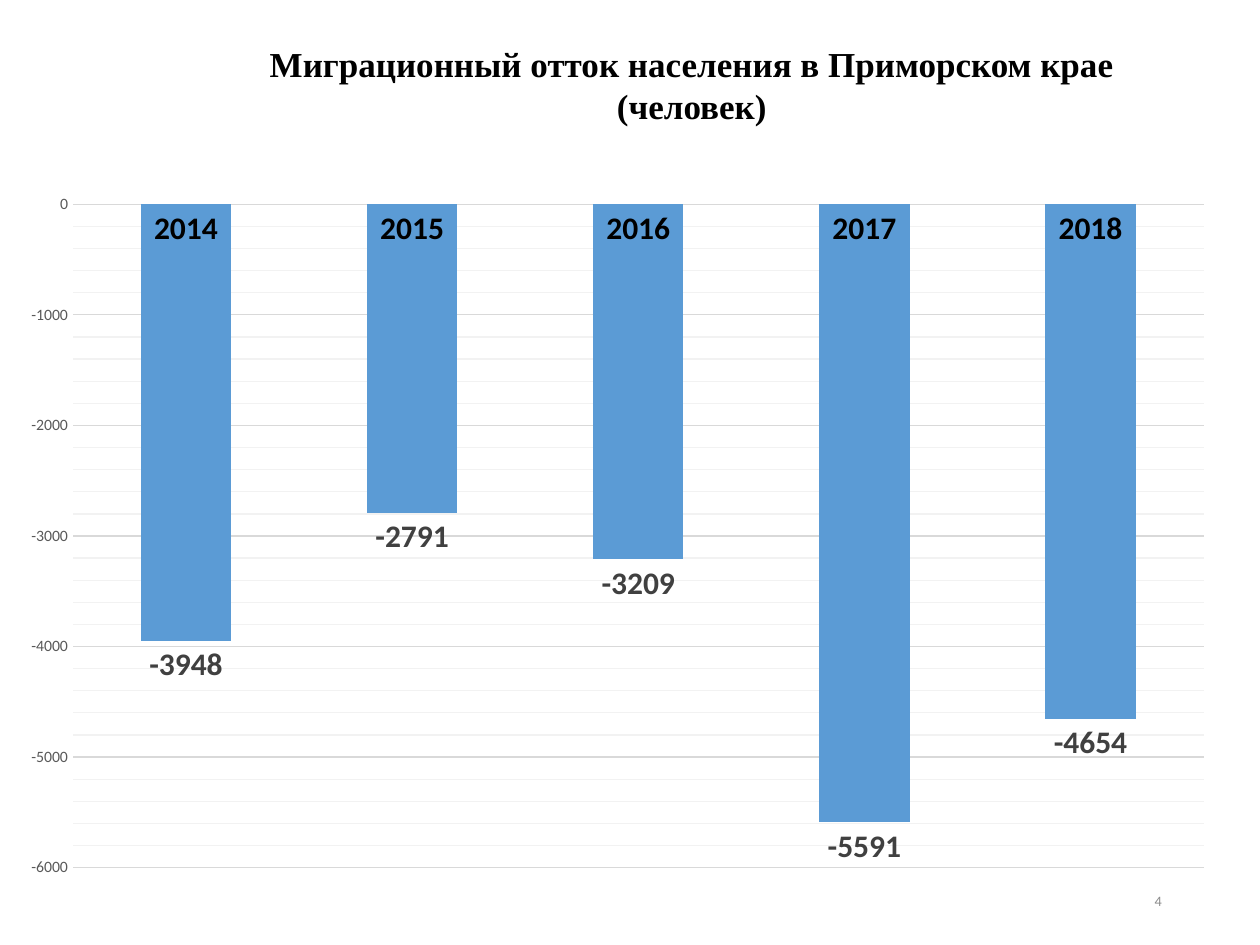
"""Build a slide with a column chart of migration outflow by year."""
import copy
import pptx
import pptx.util
import pptx.dml.color
import pptx.oxml
import pptx.chart.data
import pptx.enum.chart as enums
import pptx.enum.text as texts

TITLE = "Миграционный отток населения в Приморском крае (человек)"
PAGE = "4"
DATA = {"2014": -3948, "2015": -2791, "2016": -3209, "2017": -5591, "2018": -4654}
BOXES = {
    "title": (1.67, 0.29, 7.64, 0.77),
    "chart": (0, 1.4, 9.65, 5.56),
    "page": (7.07, 6.95, 2.25, 0.4),
}
PLOT = {"x": 0.06, "y": 0.04, "w": 0.93, "h": 0.95}
FONTS = {
    "title": {"name": "Times New Roman", "size": 20, "bold": True, "color": "000000"},
    "page": {"name": "Calibri", "size": 8.2, "bold": False, "color": "8C8C8C"},
    "chart": {"name": "Calibri", "size": 10, "bold": False, "color": "000000"},
    "years": {"name": "Calibri", "size": 18, "bold": True, "color": "000000"},
    "scale": {"name": "Calibri", "size": 9, "bold": False, "color": "595959"},
    "label": {"name": "Calibri", "size": 18, "bold": True, "color": "404040"},
}
SCALE = {
    "minimum_scale": -6000, "maximum_scale": 0, "major_unit": 1000, "minor_unit": 200,
    "has_major_gridlines": True, "has_minor_gridlines": True,
}
LABELS = {
    "show_value": True, "number_format": "General", "number_format_is_linked": False,
    "position": enums.XL_LABEL_POSITION.OUTSIDE_END,
}


def rgb(code):
    return pptx.dml.color.RGBColor.from_string(code)


def place(name):
    return [pptx.util.Inches(n) for n in BOXES[name]]


def apply(item, values):
    for key, value in values.items():
        setattr(item, key, value)


def style(font, name):
    look = dict(FONTS[name])
    font.color.rgb = rgb(look.pop("color"))
    look["size"] = pptx.util.Pt(look["size"])
    apply(font, look)


def write(shape, name, text, align, anchor):
    frame = shape.text_frame
    apply(frame, {"word_wrap": True, "vertical_anchor": anchor, "text": text})
    para = frame.paragraphs[0]
    para.alignment = align
    style(para.runs[0].font, name)


def set_plot(chart):
    area = chart._chartSpace.chart.plotArea
    for old in area.xpath("c:layout"):
        area.remove(old)
    modes = "".join(f'<c:{k}Mode val="edge"/>' for k in "xy")
    sizes = "".join(f'<c:{k} val="{v}"/>' for k, v in PLOT.items())
    space = "http://schemas.openxmlformats.org/drawingml/2006/chart"
    area.insert(0, pptx.oxml.parse_xml(
        f'<c:layout xmlns:c="{space}"><c:manualLayout><c:layoutTarget val="inner"/>'
        f"{modes}{sizes}</c:manualLayout></c:layout>"))


def set_grid(axis, major, minor):
    line = axis.major_gridlines.format.line
    line.width = pptx.util.Pt(0.75)
    line.color.rgb = rgb(minor)
    root = axis._element
    look = copy.deepcopy(root.xpath("c:majorGridlines/c:spPr")[0])
    root.xpath("c:minorGridlines")[0].append(look)
    line.color.rgb = rgb(major)


def add_chart(slide):
    data = pptx.chart.data.CategoryChartData()
    data.categories = list(DATA)
    data.add_series("Series 1", list(DATA.values()))
    kind = enums.XL_CHART_TYPE.COLUMN_CLUSTERED
    chart = slide.shapes.add_chart(kind, *place("chart"), data).chart
    apply(chart, {"has_legend": False, "has_title": False})
    style(chart.font, "chart")
    for axis, name in ((chart.category_axis, "years"), (chart.value_axis, "scale")):
        apply(axis, {"major_tick_mark": enums.XL_TICK_MARK.NONE,
                     "minor_tick_mark": enums.XL_TICK_MARK.NONE})
        axis.format.line.fill.background()
        style(axis.tick_labels.font, name)
    apply(chart.value_axis, SCALE)
    set_grid(chart.value_axis, "D9D9D9", "F2F2F2")
    plot = chart.plots[0]
    apply(plot, {"gap_width": 150, "vary_by_categories": False})
    bars = plot.series[0]
    bars.invert_if_negative = False
    bars.format.fill.solid()
    bars.format.fill.fore_color.rgb = rgb("5B9BD5")
    apply(bars.data_labels, LABELS)
    style(bars.data_labels.font, "label")
    set_plot(chart)


def main():
    deck = pptx.Presentation()
    apply(deck, {"slide_width": pptx.util.Inches(10), "slide_height": pptx.util.Inches(7.5)})
    slide = deck.slides.add_slide(deck.slide_layouts[5])
    title = slide.shapes.title
    apply(title, dict(zip(("left", "top", "width", "height"), place("title"))))
    write(title, "title", TITLE, texts.PP_ALIGN.CENTER, texts.MSO_ANCHOR.TOP)
    add_chart(slide)
    page = slide.shapes.add_textbox(*place("page"))
    write(page, "page", PAGE, texts.PP_ALIGN.RIGHT, texts.MSO_ANCHOR.MIDDLE)
    deck.save("out.pptx")


if __name__ == "__main__":
    main()
